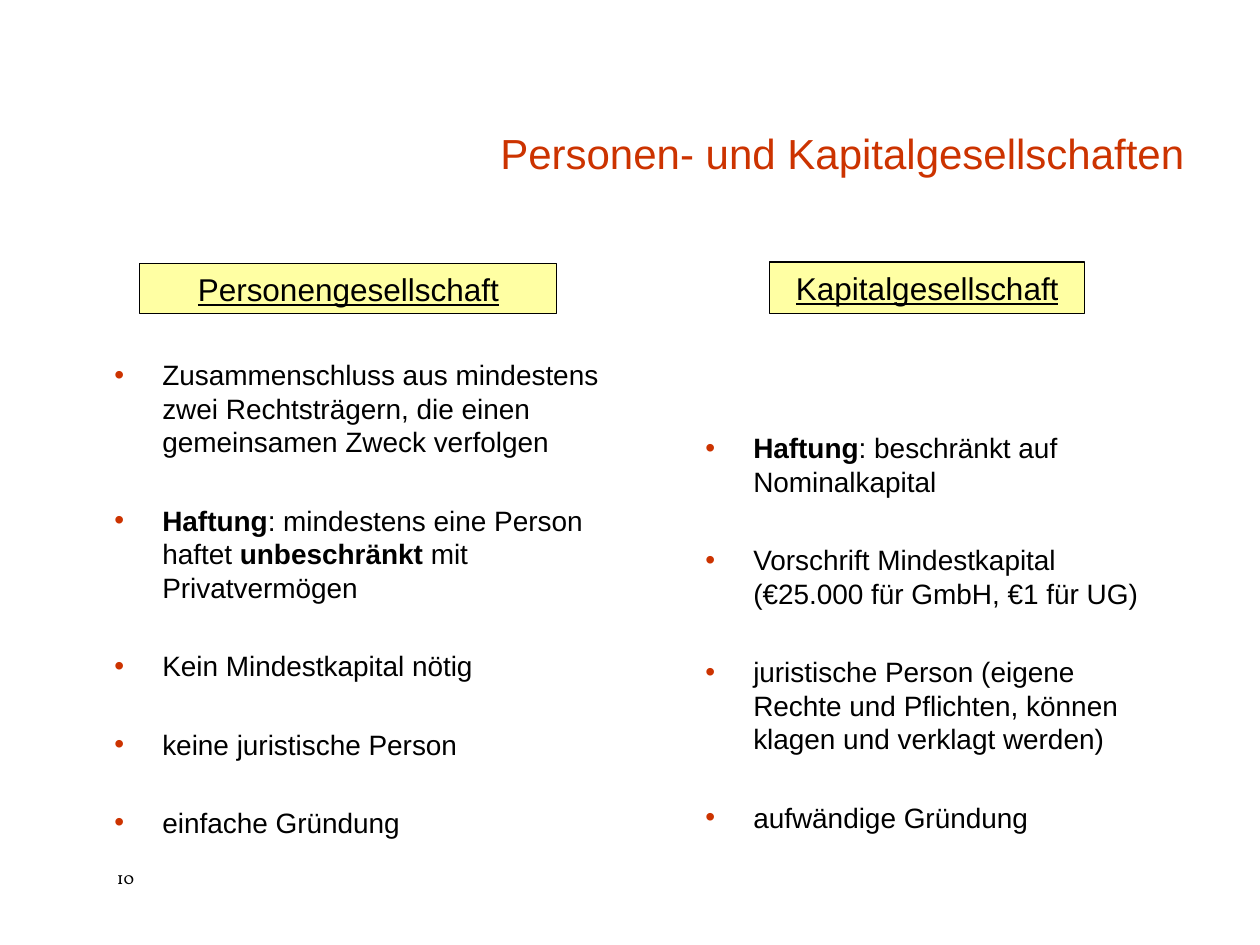
from lxml import etree
from pptx import Presentation
from pptx.dml.color import RGBColor
from pptx.enum.shapes import MSO_SHAPE
from pptx.enum.text import MSO_ANCHOR, PP_ALIGN
from pptx.oxml.ns import qn
from pptx.util import Inches, Pt

RECT = MSO_SHAPE.RECTANGLE
BOTTOM, MIDDLE = MSO_ANCHOR.BOTTOM, MSO_ANCHOR.MIDDLE
CENTER, RIGHT = PP_ALIGN.CENTER, PP_ALIGN.RIGHT
RED, BLACK, YELLOW = "CC3300", "000000", "FFFFA3"


def style(font, size, color=BLACK, name="Arial"):
    font.size = Pt(size)
    font.name = name
    font.color.rgb = RGBColor.from_string(color)


def add_bullet(p):
    """Give the paragraph a hanging red bullet."""
    pPr = p._p.get_or_add_pPr()
    pPr.set("marL", str(Inches(0.38)))
    pPr.set("indent", str(Inches(-0.38)))
    clr = etree.SubElement(pPr, qn("a:buClr"))
    etree.SubElement(clr, qn("a:srgbClr"), val=RED)
    etree.SubElement(pPr, qn("a:buFont"), typeface="Arial")
    etree.SubElement(pPr, qn("a:buChar"), char="•")


prs = Presentation()
prs.slide_width, prs.slide_height = Inches(10), Inches(7.5)
s = prs.slides.add_slide(prs.slide_layouts[5])

# Title
title = s.shapes.title
title.left, title.top = Inches(2.09), Inches(0.42)
title.width, title.height = Inches(7.41), Inches(1.05)
tf = title.text_frame
tf.text = "Personen- und Kapitalgesellschaften"
tf.vertical_anchor = BOTTOM
p = tf.paragraphs[0]
p.alignment = RIGHT
p.line_spacing = 0.9
style(p.runs[0].font, 24, RED)

# Column headings
for heading, left, top, width, height in [
    ("Personengesellschaft", 1.11, 2.09, 3.31, 0.4),
    ("Kapitalgesellschaft", 6.11, 2.08, 2.5, 0.41),
]:
    sp = s.shapes.add_shape(RECT, Inches(left), Inches(top), Inches(width), Inches(height))
    sp.shadow.inherit = False
    sp.fill.solid()
    sp.fill.fore_color.rgb = RGBColor.from_string(YELLOW)
    sp.line.color.rgb = RGBColor.from_string(BLACK)
    sp.line.width = Pt(0.75)
    tf = sp.text_frame
    tf.text = heading
    tf.vertical_anchor = MIDDLE
    p = tf.paragraphs[0]
    p.alignment = CENTER
    style(p.runs[0].font, 18)
    p.runs[0].font.underline = True

# Bullet lists: each item is a list of runs, (text, bold)
partnership = [
    [("Zusammenschluss aus mindestens zwei Rechtsträgern, die einen "
      "gemeinsamen Zweck verfolgen", False)],
    [("Haftung", True), (": mindestens eine Person haftet ", False),
     ("unbeschränkt", True), (" mit Privatvermögen", False)],
    [("Kein Mindestkapital nötig", False)],
    [("keine juristische Person", False)],
    [("einfache Gründung", False)],
]
corporation = [
    [("Haftung", True), (": beschränkt auf Nominalkapital", False)],
    [("Vorschrift Mindestkapital (€25.000 für GmbH, €1 für UG)", False)],
    [("juristische Person (eigene Rechte und Pflichten, können klagen "
      "und verklagt werden)", False)],
    [("aufwändige Gründung", False)],
]
for items, left, top, width, height in [
    (partnership, 0.81, 2.79, 4.35, 3.31),
    (corporation, 5.5, 3.37, 3.78, 2.95),
]:
    sp = s.shapes.add_textbox(Inches(left), Inches(top), Inches(width), Inches(height))
    tf = sp.text_frame
    tf.word_wrap = True
    for i, item in enumerate(items):
        p = tf.add_paragraph() if i else tf.paragraphs[0]
        add_bullet(p)
        p.line_spacing = Pt(19.2)
        p.space_before = Pt(25.6 if i else 0)
        for text, bold in item:
            r = p.add_run()
            r.text = text
            style(r.font, 16)
            r.font.bold = bold

# Page number
sp = s.shapes.add_textbox(Inches(0.83), Inches(6.83), Inches(0.67), Inches(0.27))
tf = sp.text_frame
tf.word_wrap = True
tf.text = "10"
style(tf.paragraphs[0].runs[0].font, 10, name="Vollkorn")

prs.save("out.pptx")
